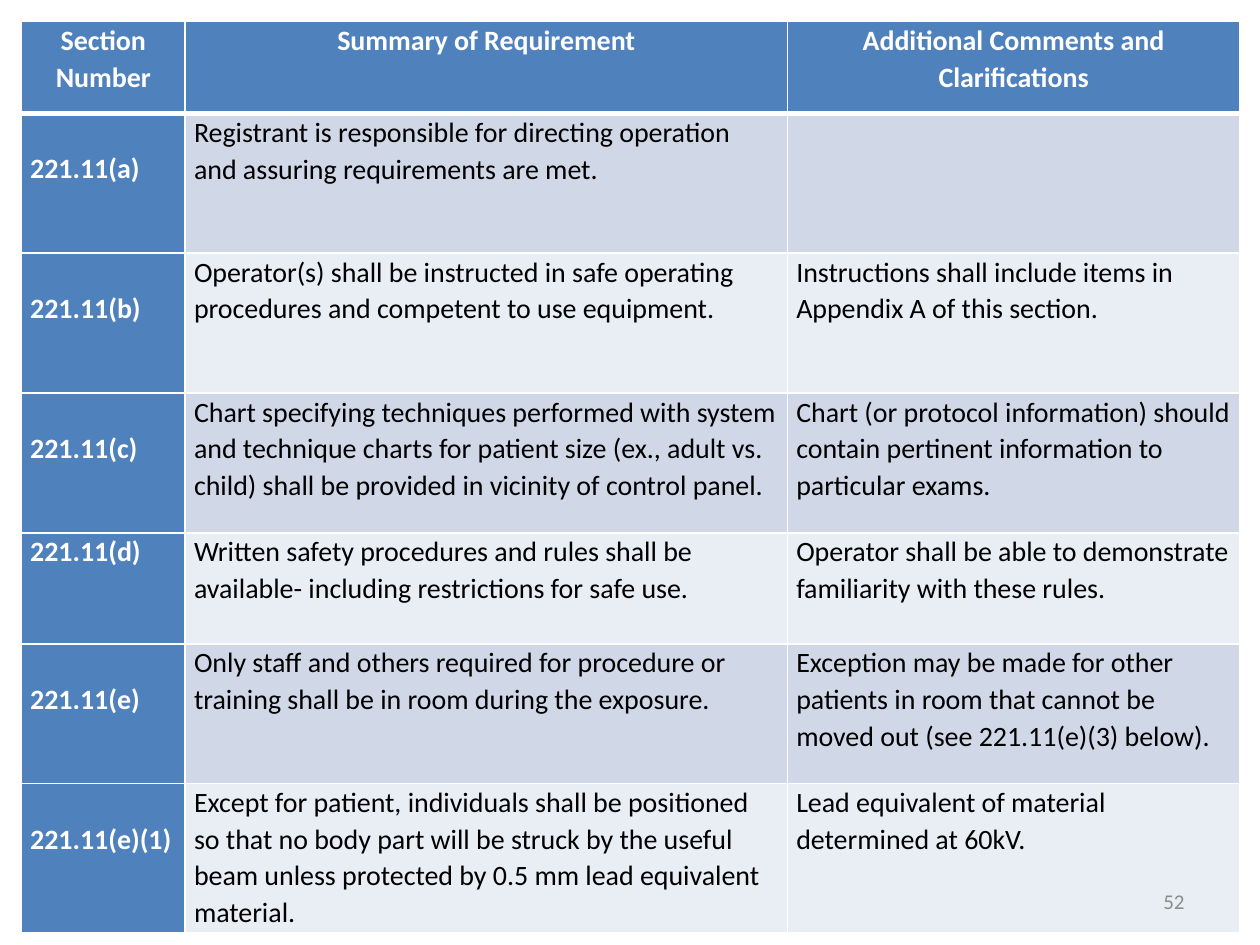
from lxml.etree import SubElement
from pptx import Presentation
from pptx.dml.color import RGBColor
from pptx.enum.text import MSO_ANCHOR, PP_ALIGN
from pptx.oxml.ns import qn
from pptx.util import Inches, Pt

COLORS = {
    "header": "4F81BD",
    "band_dark": "D0D8E8",
    "band_light": "E9EDF4",
    "white": "FFFFFF",
    "black": "000000",
    "gray": "8C8C8C",
}
COLUMN_WIDTHS = [1.3, 4.78, 3.59]
ROW_HEIGHTS = [0.73, 1.11, 1.11, 1.11, 0.88, 1.11, 1.18]
ONE_LINE = 0.29  # drop of a section number to its second line
TOP_SECTION = "221.11(d)"  # the one section number on the first line

REQUIREMENTS = [
    ("Section Number", "Summary of Requirement",
     "Additional Comments and Clarifications"),
    ("221.11(a)",
     "Registrant is responsible for directing operation and assuring "
     "requirements are met.",
     ""),
    ("221.11(b)",
     "Operator(s) shall be instructed in safe operating procedures and "
     "competent to use equipment.",
     "Instructions shall include items in Appendix A of this section."),
    ("221.11(c)",
     "Chart specifying techniques performed with system and technique charts "
     "for patient size (ex., adult vs. child) shall be provided in vicinity "
     "of control panel.",
     "Chart (or protocol information) should contain pertinent information "
     "to particular exams."),
    ("221.11(d)",
     "Written safety procedures and rules shall be available- including "
     "restrictions for safe use.",
     "Operator shall be able to demonstrate familiarity with these rules."),
    ("221.11(e)",
     "Only staff and others required for procedure or training shall be in "
     "room during the exposure.",
     "Exception may be made for other patients in room that cannot be moved "
     "out (see 221.11(e)(3) below)."),
    ("221.11(e)(1)",
     "Except for patient, individuals shall be positioned so that no body "
     "part will be struck by the useful beam unless protected by 0.5 mm lead "
     "equivalent material.",
     "Lead equivalent of material determined at 60kV."),
]


class SlideBuilder:
    """Holds the text style and the current slide."""

    font_name = "Calibri"
    line_spacing = 1.07

    def __init__(self, slide):
        self.slide = slide

    def add_run(self, paragraph, text, size, color, bold=False):
        run = paragraph.add_run()
        run.text = text
        run.font.name = self.font_name
        run.font.size = Pt(size)
        run.font.bold = bold
        run.font.color.rgb = RGBColor.from_string(COLORS[color])

    def add_borders(self, cell, widths):
        properties = cell._tc.get_or_add_tcPr()
        for side, width in widths.items():
            line = SubElement(properties, qn(f"a:ln{side}"), w=str(Pt(width)))
            fill = SubElement(line, qn("a:solidFill"))
            SubElement(fill, qn("a:srgbClr"), val=COLORS["white"])

    def fill_cell(self, cell, text, row, column):
        is_header, is_section = row == 0, column == 0
        emphasized = is_header or is_section
        self.add_borders(cell, {"L": 1, "R": 1, "T": 3 if row == 1 else 1,
                                "B": 3 if is_header else 1})
        band = "band_dark" if row % 2 else "band_light"
        cell.fill.solid()
        cell.fill.fore_color.rgb = RGBColor.from_string(
            COLORS["header" if emphasized else band])

        dropped = is_section and not is_header and text != TOP_SECTION
        cell.margin_left = cell.margin_right = Inches(0.07)
        cell.margin_top = Inches(ONE_LINE if dropped else 0)
        cell.margin_bottom = Inches(0)
        if text:
            paragraph = cell.text_frame.paragraphs[0]
            paragraph.line_spacing = self.line_spacing
            paragraph.alignment = PP_ALIGN.CENTER if is_header else PP_ALIGN.LEFT
            self.add_run(paragraph, text, 16,
                         "white" if emphasized else "black", emphasized)

    def add_table(self, rows, left, top):
        shape = self.slide.shapes.add_table(
            len(rows), len(COLUMN_WIDTHS), Inches(left), Inches(top),
            Inches(sum(COLUMN_WIDTHS)), Inches(sum(ROW_HEIGHTS)))
        table = shape.table
        table.first_col = True
        for column, width in zip(table.columns, COLUMN_WIDTHS):
            column.width = Inches(width)
        for table_row, height in zip(table.rows, ROW_HEIGHTS):
            table_row.height = Inches(height)
        for row, texts in enumerate(rows):
            for column, text in enumerate(texts):
                self.fill_cell(table.cell(row, column), text, row, column)

    def add_page_number(self, text, left, top, width, height):
        shape = self.slide.shapes.add_textbox(
            Inches(left), Inches(top), Inches(width), Inches(height))
        frame = shape.text_frame
        frame.word_wrap = True
        frame.vertical_anchor = MSO_ANCHOR.MIDDLE
        paragraph = frame.paragraphs[0]
        paragraph.alignment = PP_ALIGN.RIGHT
        self.add_run(paragraph, text, 12, "gray")


def main():
    presentation = Presentation()
    presentation.slide_width = Inches(10)
    presentation.slide_height = Inches(7.5)
    blank_layout = presentation.slide_layouts[6]
    builder = SlideBuilder(presentation.slides.add_slide(blank_layout))

    # Requirements table
    builder.add_table(REQUIREMENTS, 0.17, 0.17)

    # Page number
    builder.add_page_number("52", 7.17, 6.95, 2.33, 0.4)

    presentation.save("out.pptx")


if __name__ == "__main__":
    main()
